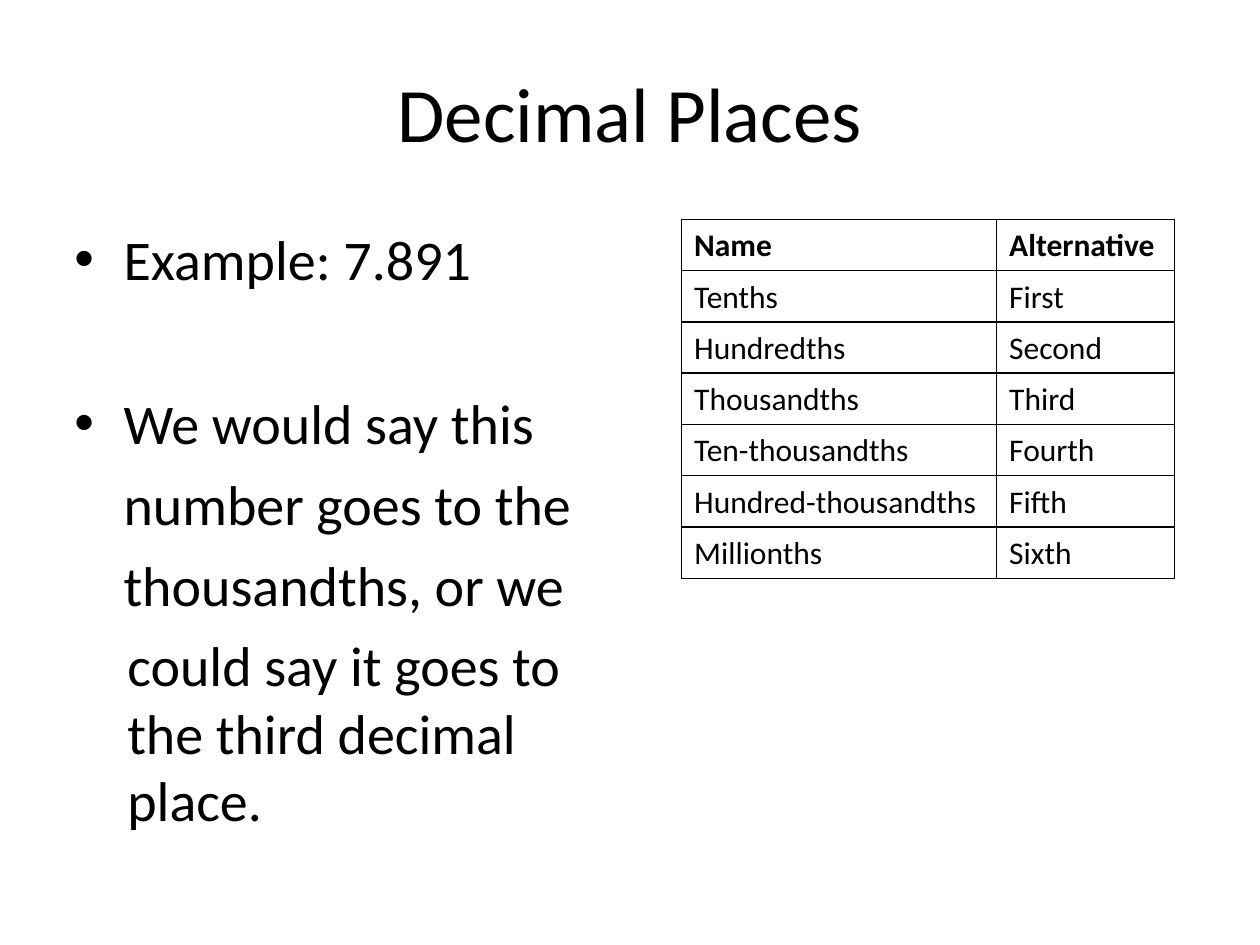
from lxml import etree
from pptx import Presentation
from pptx.dml.color import RGBColor
from pptx.enum.text import MSO_ANCHOR, MSO_AUTO_SIZE, PP_ALIGN
from pptx.oxml.ns import qn
from pptx.util import Inches, Pt

TOP = MSO_ANCHOR.TOP
NO_FIT = MSO_AUTO_SIZE.NONE
LEFT, CENTER = PP_ALIGN.LEFT, PP_ALIGN.CENTER
BLACK = RGBColor(0, 0, 0)
FONT = "Calibri"


def add_run(paragraph, text, size, bold=False):
    run = paragraph.add_run()
    run.text = text
    run.font.name = FONT
    run.font.size = Pt(size)
    run.font.bold = bold
    run.font.color.rgb = BLACK


def place(holder, left, top, width, height):
    holder.left, holder.top = Inches(left), Inches(top)
    holder.width, holder.height = Inches(width), Inches(height)
    frame = holder.text_frame
    frame.margin_left = frame.margin_right = frame.margin_bottom = 0
    frame.margin_top = Inches(0.02)
    frame.vertical_anchor = TOP
    frame.auto_size = NO_FIT
    frame.word_wrap = True
    return frame


prs = Presentation()
prs.slide_width, prs.slide_height = Inches(10), Inches(7.5)
slide = prs.slides.add_slide(prs.slide_layouts[1])

heading = place(slide.shapes.title, 3.14, 0.5, 3.72, 0.76).paragraphs[0]
heading.alignment = CENTER
add_run(heading, "Decimal Places", 44)

explanation = place(slide.placeholders[1], 0.59, 1.76, 8.23, 3.76)
statements = [
    ("Example: 7.891", 0.39, True, 0, 1.0),
    ("We would say this number goes to the thousandths, or we", 0.39, True, 48, 1.2),
    ("could say it goes to the third decimal place.", 0.42, False, 7.7, 1.0),
]
for index, (statement, indent, bulleted, before, spacing) in enumerate(statements):
    paragraph = explanation.paragraphs[0] if index == 0 else explanation.add_paragraph()
    paragraph.alignment = LEFT
    paragraph.space_before = Pt(before)
    paragraph.line_spacing = spacing
    properties = paragraph._p.get_or_add_pPr()
    properties.set("marL", str(Inches(indent)))
    properties.set("marR", str(Inches(4.07)))
    properties.set("indent", str(-Inches(indent) if bulleted else 0))
    if bulleted:
        etree.SubElement(properties, qn("a:buFont"), typeface="Arial")
        etree.SubElement(properties, qn("a:buChar"), char="•")
    else:
        etree.SubElement(properties, qn("a:buNone"))
    add_run(paragraph, statement, 32)

place_names = [
    ("Name", "Alternative"),
    ("Tenths", "First"),
    ("Hundredths", "Second"),
    ("Thousandths", "Third"),
    ("Ten-thousandths", "Fourth"),
    ("Hundred-thousandths", "Fifth"),
    ("Millionths", "Sixth"),
]
row_height = Inches(2.85 / len(place_names))
names_table = slide.shapes.add_table(
    len(place_names), 2, Inches(5.41), Inches(1.74), Inches(3.91), Inches(2.85)
).table
for column, width in zip(names_table.columns, (2.5, 1.41)):
    column.width = Inches(width)
for row_index, names in enumerate(place_names):
    names_table.rows[row_index].height = row_height
    for column_index, name in enumerate(names):
        cell = names_table.cell(row_index, column_index)
        cell.margin_left, cell.margin_top = Inches(0.1), Inches(0.06)
        cell.margin_right = cell.margin_bottom = 0
        cell.vertical_anchor = TOP
        add_run(cell.text_frame.paragraphs[0], name, 18, bold=row_index == 0)
        borders = cell._tc.get_or_add_tcPr()
        for side in ("a:lnL", "a:lnR", "a:lnT", "a:lnB"):
            border = etree.SubElement(borders, qn(side), w=str(Pt(1)))
            fill = etree.SubElement(border, qn("a:solidFill"))
            etree.SubElement(fill, qn("a:srgbClr"), val=str(BLACK))
        cell.fill.background()

prs.save("out.pptx")
